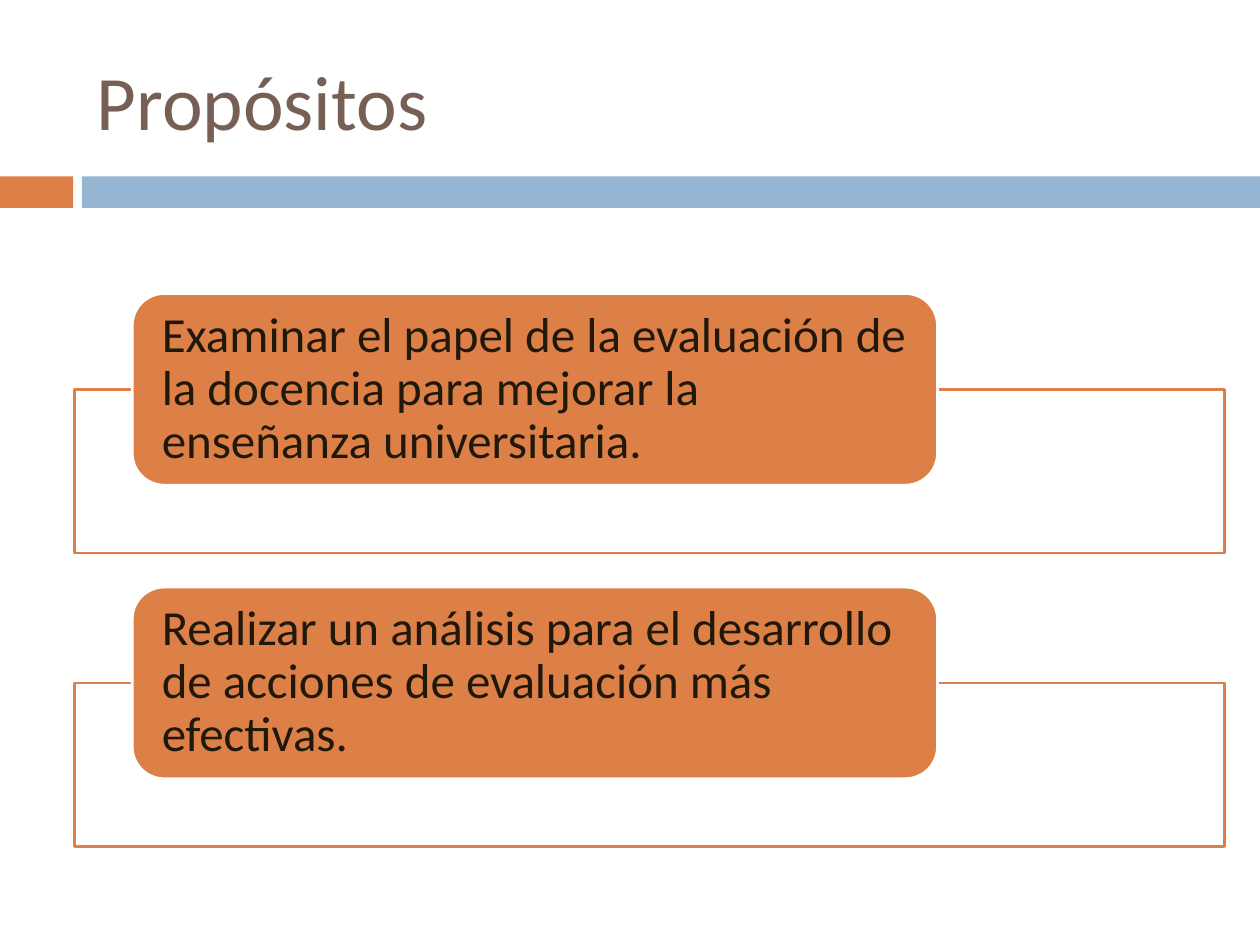
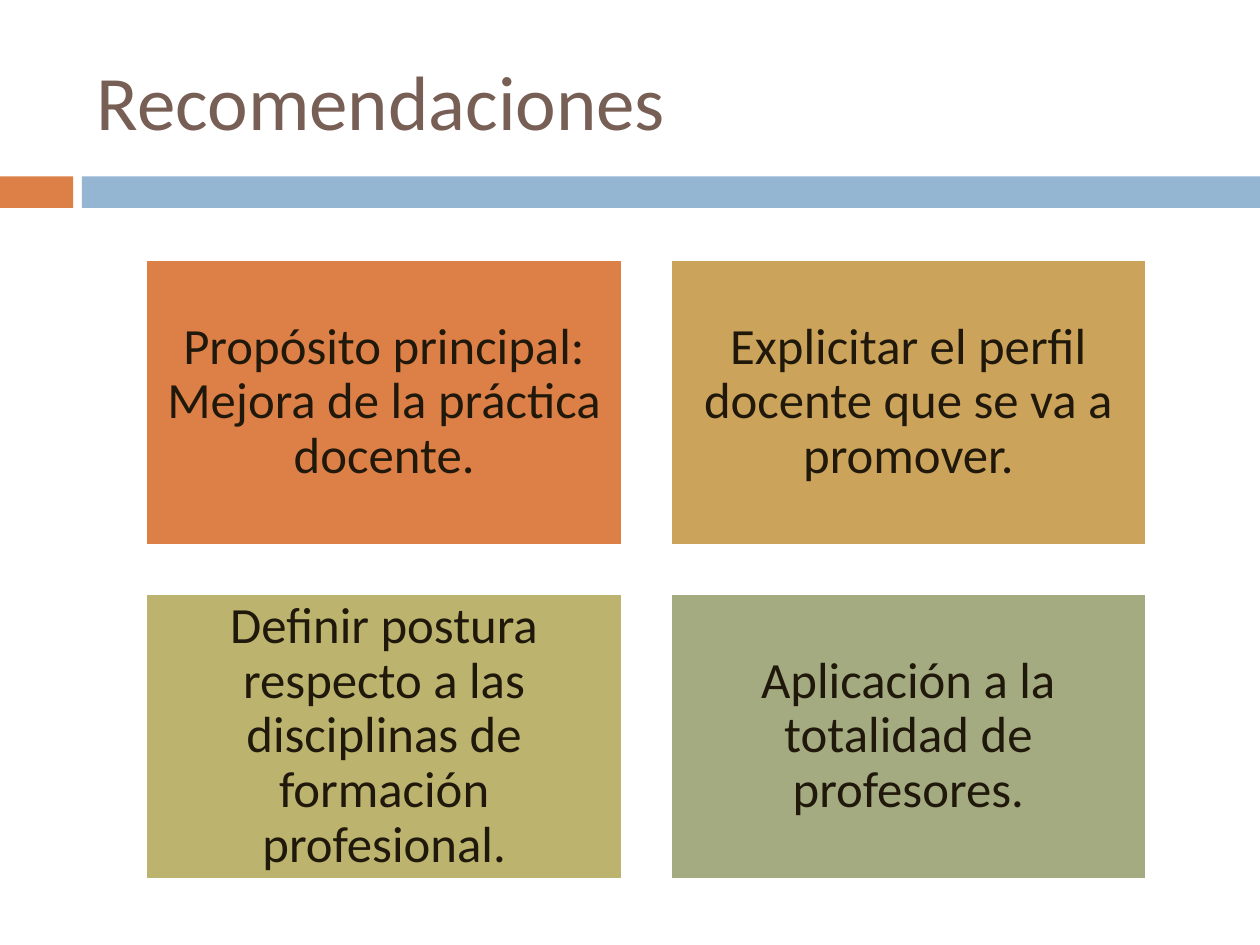
from dataclasses import dataclass

from pptx import Presentation
from pptx.dml.color import RGBColor
from pptx.enum.shapes import MSO_SHAPE
from pptx.enum.text import MSO_ANCHOR, PP_ALIGN
from pptx.util import Inches, Pt

RECT, ROUNDED = MSO_SHAPE.RECTANGLE, MSO_SHAPE.ROUNDED_RECTANGLE
LEFT, CENTER = PP_ALIGN.LEFT, PP_ALIGN.CENTER
MIDDLE = MSO_ANCHOR.MIDDLE

WHITE = RGBColor(0xFF, 0xFF, 0xFF)
ORANGE = RGBColor(0xDD, 0x80, 0x47)
BLUE = RGBColor(0x94, 0xB6, 0xD2)
GOLD = RGBColor(0xCC, 0xA3, 0x5B)
OLIVE = RGBColor(0xBB, 0xB3, 0x6E)
SAGE = RGBColor(0xA5, 0xAB, 0x81)
BROWN = RGBColor(0x77, 0x5F, 0x55)
INK = RGBColor(0x20, 0x19, 0x0B)
FONT = "Calibri"


@dataclass(frozen=True)
class Box:
    left: float
    top: float
    width: float
    height: float

    def moved(self, dx: float, dy: float) -> "Box":
        return Box(self.left + dx, self.top + dy, self.width, self.height)

    def lengths(self) -> list:
        return [Inches(v) for v in (self.left, self.top, self.width, self.height)]


@dataclass(frozen=True)
class TextStyle:
    size: float
    color: RGBColor
    align: PP_ALIGN = LEFT
    inset_x: float = 0.1
    inset_y: float = 0
    line_spacing: float = 0.9


@dataclass(frozen=True)
class Recommendation:
    text: str
    fill: RGBColor


TITLE_BOX = Box(0.67, 0.25, 8.92, 1.08)
ACCENT_BAND = Box(0, 1.4, 0.58, 0.25)
MAIN_BAND = Box(0.65, 1.4, 9.35, 0.25)
TITLE_STYLE = TextStyle(44, BROWN, inset_y=0.05, line_spacing=1)

FRAME = Box(0.59, 3.09, 9.13, 1.3)
LABEL = Box(1.05, 2.33, 6.39, 1.52)
PURPOSE_STEP = 2.33
# The rounded corners add their own 0.07 inch to the inset.
PURPOSE_STYLE = TextStyle(28, INK, inset_x=0.16)
PURPOSES = (
    "Examinar el papel de la evaluación de la docencia para mejorar la "
    "enseñanza universitaria.",
    "Realizar un análisis para el desarrollo de acciones de evaluación más "
    "efectivas.",
)

CARD = Box(1.16, 2.06, 3.78, 2.27)
CARD_GAP = 0.38
CARD_COLUMNS = 2
CARD_STYLE = TextStyle(29, INK, CENTER, inset_x=0.12)
RECOMMENDATIONS = (
    Recommendation("Propósito principal: Mejora de la práctica docente.", ORANGE),
    Recommendation("Explicitar el perfil docente que se va a promover.", GOLD),
    Recommendation("Definir postura respecto a las disciplinas de formación "
                   "profesional.", OLIVE),
    Recommendation("Aplicación a la totalidad de profesores.", SAGE),
)


def add_box(s, kind, box: Box, fill: RGBColor, line: RGBColor | None = None):
    sp = s.shapes.add_shape(kind, *box.lengths())
    sp.shadow.inherit = False
    sp.fill.solid()
    sp.fill.fore_color.rgb = fill
    if line is None:
        sp.line.fill.background()
    else:
        sp.line.color.rgb = line
        sp.line.width = Pt(1.5)
    return sp


def write(sp, text: str, style: TextStyle) -> None:
    tf = sp.text_frame
    tf.word_wrap = True
    tf.vertical_anchor = MIDDLE
    tf.margin_left = tf.margin_right = Inches(style.inset_x)
    tf.margin_top = tf.margin_bottom = Inches(style.inset_y)
    p = tf.paragraphs[0]
    p.alignment = style.align
    p.line_spacing = style.line_spacing
    r = p.add_run()
    r.text = text
    r.font.name = FONT
    r.font.size = Pt(style.size)
    r.font.color.rgb = style.color


def add_titled_slide(prs, title: str):
    """Add a blank slide with the shared bands and the title."""
    s = prs.slides.add_slide(prs.slide_layouts[6])
    add_box(s, RECT, ACCENT_BAND, ORANGE)
    add_box(s, RECT, MAIN_BAND, BLUE)
    write(s.shapes.add_textbox(*TITLE_BOX.lengths()), title, TITLE_STYLE)
    return s


def build_purposes(prs) -> None:
    s = add_titled_slide(prs, "Propósitos")
    for i, text in enumerate(PURPOSES):
        dy = i * PURPOSE_STEP
        add_box(s, RECT, FRAME.moved(0, dy), WHITE, ORANGE)
        label = add_box(s, ROUNDED, LABEL.moved(0, dy), ORANGE, WHITE)
        write(label, text, PURPOSE_STYLE)


def build_recommendations(prs) -> None:
    s = add_titled_slide(prs, "Recomendaciones")
    for i, item in enumerate(RECOMMENDATIONS):
        row, col = divmod(i, CARD_COLUMNS)
        box = CARD.moved(col * (CARD.width + CARD_GAP), row * (CARD.height + CARD_GAP))
        write(add_box(s, RECT, box, item.fill, WHITE), item.text, CARD_STYLE)


def main() -> None:
    prs = Presentation()
    prs.slide_width, prs.slide_height = Inches(10), Inches(7.5)
    build_purposes(prs)
    build_recommendations(prs)
    prs.save("out.pptx")


if __name__ == "__main__":
    main()
